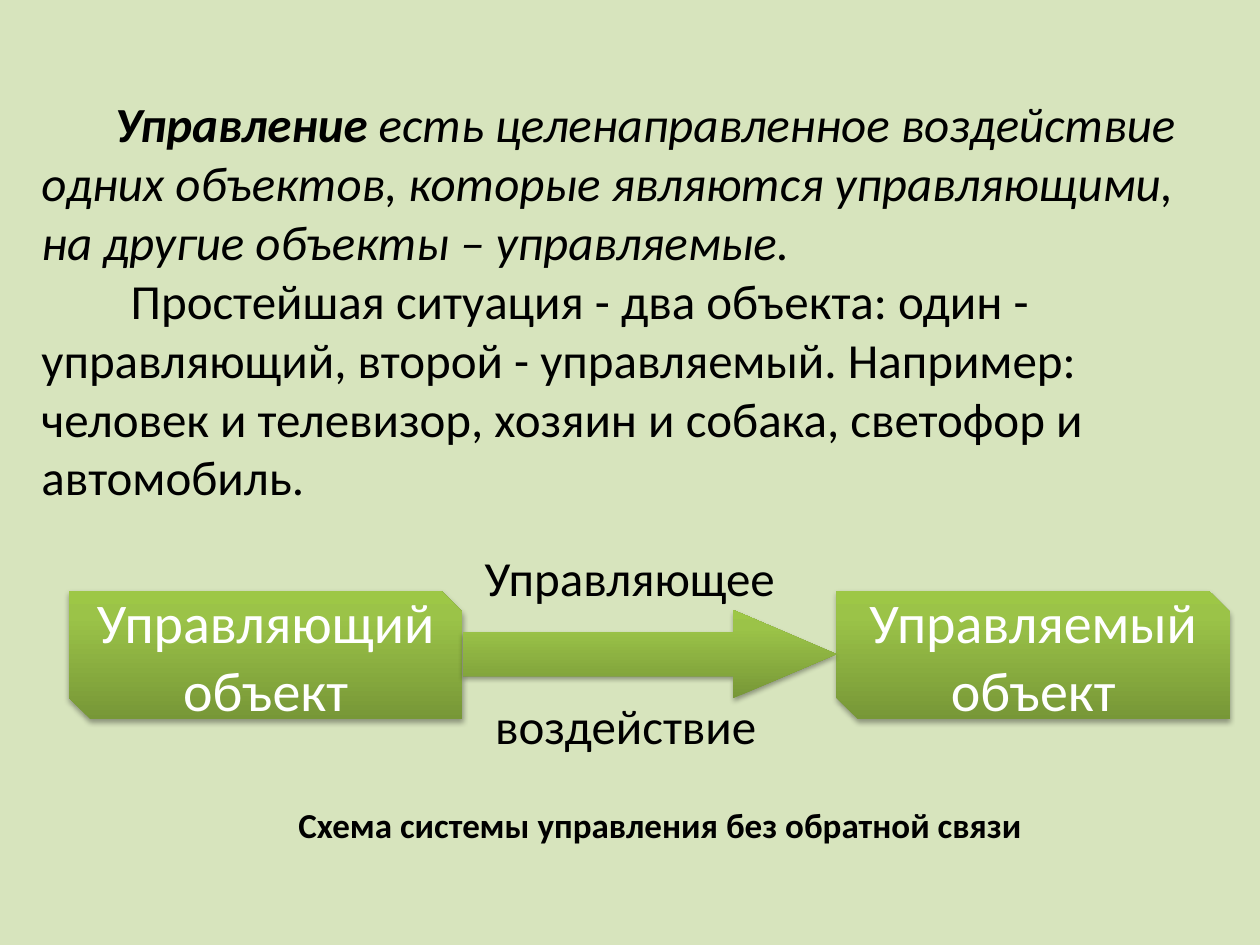
from lxml import etree
from pptx import Presentation
from pptx.dml import color
from pptx.enum import shapes, text
from pptx.oxml import ns
from pptx.util import Pt

INK, PAPER, WHITE = "000000", "D7E4BD", "FFFFFF"
STOPS = [(0, "779737"), (80, "9BC348"), (100, "9DC746")]


def rgb(code):
    """Turn a hex string into a colour."""
    return color.RGBColor.from_string(code)


def child(node, tag, **attrs):
    """Add a drawing element under a node."""
    return etree.SubElement(node, ns.qn("a:" + tag), {k: str(v) for k, v in attrs.items()})


def style(run, size, code=INK, bold=False, italic=False):
    """Set the font of a run."""
    font = run.font
    font.name, font.size, font.bold, font.italic = "Calibri", Pt(size), bold, italic
    font.color.rgb = rgb(code)


def label(slide, words, box, size, bold=False):
    """Place one line of text."""
    frame = slide.shapes.add_textbox(*map(Pt, box)).text_frame
    frame.word_wrap = True
    frame.text = words
    style(frame.paragraphs[0].runs[0], size, bold=bold)


def block(slide, kind, box, words=""):
    """Place a green shaded shape with white centred words."""
    shape = slide.shapes.add_shape(kind, *map(Pt, box))
    shape.line.fill.background()
    shape.fill.gradient()
    shape.fill.gradient_angle = 90
    stops = shape._element.spPr.find(".//" + ns.qn("a:gsLst"))
    for old in list(stops):
        stops.remove(old)
    for place, code in STOPS:
        child(child(stops, "gs", pos=place * 1000), "srgbClr", val=code)
    shape.shadow.inherit = False
    glow = child(shape._element.spPr.find(ns.qn("a:effectLst")), "outerShdw",
                 blurRad=Pt(3.1), dist=Pt(1.8), dir=5400000, rotWithShape=0)
    child(child(glow, "srgbClr", val=INK), "alpha", val=35000)
    if words:
        frame = shape.text_frame
        frame.word_wrap = True
        frame.vertical_anchor = text.MSO_ANCHOR.MIDDLE
        frame.text = words
        frame.paragraphs[0].alignment = text.PP_ALIGN.CENTER
        style(frame.paragraphs[0].runs[0], 32, WHITE)
    return shape


def intro(slide, box):
    """Place the definition and the example."""
    frame = slide.shapes.add_textbox(*map(Pt, box)).text_frame
    frame.word_wrap = True
    frame.vertical_anchor = text.MSO_ANCHOR.MIDDLE
    paras = [
        (42, [("Управление", True, True),
              (" есть целенаправленное воздействие одних объектов, которые являются "
               "управляющими, на другие объекты – управляемые.", False, True)]),
        (51, [("Простейшая ситуация - два объекта: один - управляющий, второй - "
               "управляемый. Например: человек и телевизор, хозяин и собака, "
               "светофор и автомобиль.", False, False)]),
    ]
    for i, (indent, runs) in enumerate(paras):
        para = frame.add_paragraph() if i else frame.paragraphs[0]
        para._p.get_or_add_pPr().set("indent", str(Pt(indent)))
        for words, bold, italic in runs:
            run = para.add_run()
            run.text = words
            style(run, 28, bold=bold, italic=italic)


def scheme(slide, box):
    """Place two objects joined by an arrow with its labels."""
    left, top, width, high = box
    wide = 225
    right = left + width - wide
    for x, words in ((left, "Управляющий объект"), (right, "Управляемый объект")):
        block(slide, shapes.MSO_SHAPE.SNIP_2_DIAG_RECTANGLE, (x, top, wide, high), words)
    arrow = block(slide, shapes.MSO_SHAPE.RIGHT_ARROW,
                  (left + wide, top + 11, width - 2 * wide, 50.4))
    arrow.adjustments[0], arrow.adjustments[1] = 0.5, 1.17
    label(slide, "Управляющее", (left + 230.5, top - 28, 191.5, 41), 28)
    label(slide, "воздействие", (left + 236.5, top + 56.2, 168.5, 41), 28)


def main():
    """Build and save the slide."""
    deck = Presentation()
    deck.slide_width, deck.slide_height = Pt(720), Pt(540)
    slide = deck.slides.add_slide(deck.slide_layouts[6])
    slide.background.fill.solid()
    slide.background.fill.fore_color.rgb = rgb(PAPER)
    intro(slide, (16.6, 28, 684, 286.6))
    scheme(slide, (39.4, 337.6, 663.6, 73.4))
    label(slide, "Схема системы управления без обратной связи",
          (163.4, 455.8, 438.5, 31.7), 20, bold=True)
    deck.save("out.pptx")


if __name__ == "__main__":
    main()
